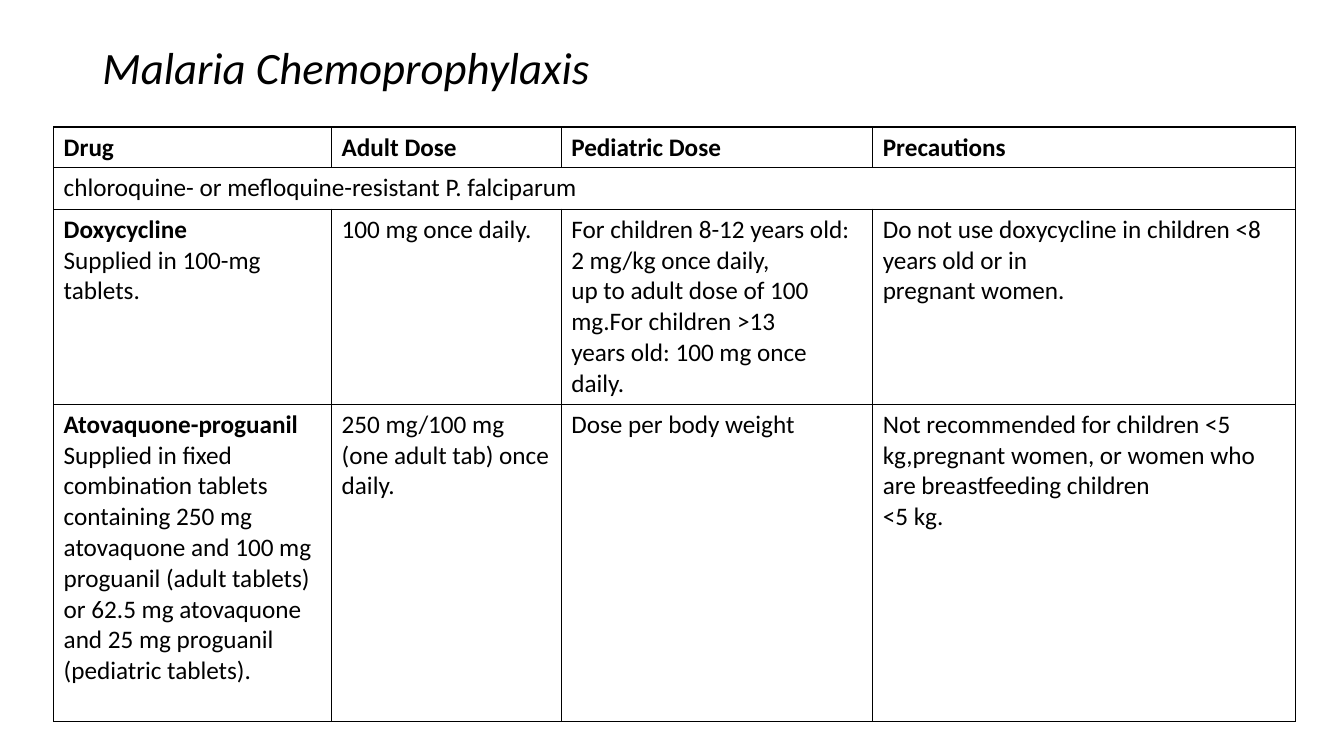
from lxml import etree
from pptx import Presentation
from pptx.dml.color import RGBColor
from pptx.enum import text
from pptx.oxml.ns import qn
from pptx.util import Pt

FONT = {"name": "Calibri", "size": Pt(18), "italic": False}
COLUMN_WIDTHS = [198.6, 164, 222.5, 302.2]
ROW_HEIGHTS = [28.8, 29.6, 139.4, 226.5]
DOSING = [
    ["Drug", "Adult Dose", "Pediatric Dose", "Precautions"],
    ["chloroquine- or mefloquine-resistant P. falciparum", "", "", ""],
    [
        "Doxycycline\nSupplied in 100-mg tablets.",
        "100 mg once daily.",
        "For children 8-12 years old: 2 mg/kg once daily,\n"
        "up to adult dose of 100 mg.For children >13\n"
        "years old: 100 mg once daily.",
        "Do not use doxycycline in children <8 years old or in\npregnant women.",
    ],
    [
        "Atovaquone-proguanil\n"
        "Supplied in fixed combination tablets containing 250 mg\n"
        "atovaquone and 100 mg\n"
        "proguanil (adult tablets) or 62.5 mg atovaquone and 25 mg proguanil (pediatric tablets).",
        "250 mg/100 mg (one adult tab) once\ndaily.",
        "Dose per body weight",
        "Not recommended for children <5 kg,pregnant women, or women who are breastfeeding children\n"
        "<5 kg.",
    ],
]


def paint(color_format, hex_color):
    """Apply a hex colour to a font or fill colour."""
    color_format.rgb = RGBColor.from_string(hex_color)


def style(font, **changes):
    """Format a font in black with the shared values and any changes."""
    for key, value in {**FONT, **changes}.items():
        setattr(font, key, value)
    paint(font.color, "000000")


def frame_cell(cell, hex_color, width):
    """Give a cell a solid border on its four sides and a white fill."""
    properties = cell._tc.get_or_add_tcPr()
    for side in ("lnL", "lnR", "lnT", "lnB"):
        line = etree.SubElement(properties, qn(f"a:{side}"), w=str(Pt(width)))
        fill = etree.SubElement(line, qn("a:solidFill"))
        etree.SubElement(fill, qn("a:srgbClr"), val=hex_color)
    cell.fill.solid()
    paint(cell.fill.fore_color, "FFFFFF")


def add_heading(slide, left, top, width, height):
    """Place the slide title in the given box."""
    heading = slide.shapes.title
    box = {"left": left, "top": top, "width": width, "height": height}
    for key, value in box.items():
        setattr(heading, key, Pt(value))
    heading.text_frame.vertical_anchor = text.MSO_ANCHOR.MIDDLE
    paragraph = heading.text_frame.paragraphs[0]
    paragraph.alignment = text.PP_ALIGN.LEFT
    paragraph.line_spacing = 0.9
    run = paragraph.add_run()
    run.text = "Malaria Chemoprophylaxis"
    style(run.font, size=Pt(32), italic=True, bold=False)


def add_dosing_table(slide, left, top):
    """Place the dosing table with its corner at the given point."""
    table = slide.shapes.add_table(
        len(DOSING), len(COLUMN_WIDTHS), Pt(left), Pt(top),
        Pt(sum(COLUMN_WIDTHS)), Pt(sum(ROW_HEIGHTS)),
    ).table
    table.first_row = table.horz_banding = False
    for column, width in zip(table.columns, COLUMN_WIDTHS):
        column.width = Pt(width)
    for row, height in zip(table.rows, ROW_HEIGHTS):
        row.height = Pt(height)
    for r, entries in enumerate(DOSING):
        for c, entry in enumerate(entries):
            cell = table.cell(r, c)
            frame_cell(cell, "000000", 1)
            cell.text = entry
            for p, paragraph in enumerate(cell.text_frame.paragraphs):
                drug_name = r > 1 and c == 0 and p == 0
                for run in paragraph.runs:
                    style(run.font, bold=r == 0 or drug_name)
    table.cell(1, 0).merge(table.cell(1, len(COLUMN_WIDTHS) - 1))


def main():
    """Build and save the slide."""
    deck = Presentation()
    deck.slide_width, deck.slide_height = Pt(960), Pt(540)
    slide = deck.slides.add_slide(deck.slide_layouts[5])
    add_heading(slide, 66, 28.8, 828, 41.8)
    add_dosing_table(slide, 38.3, 90.7)
    deck.save("out.pptx")


if __name__ == "__main__":
    main()
